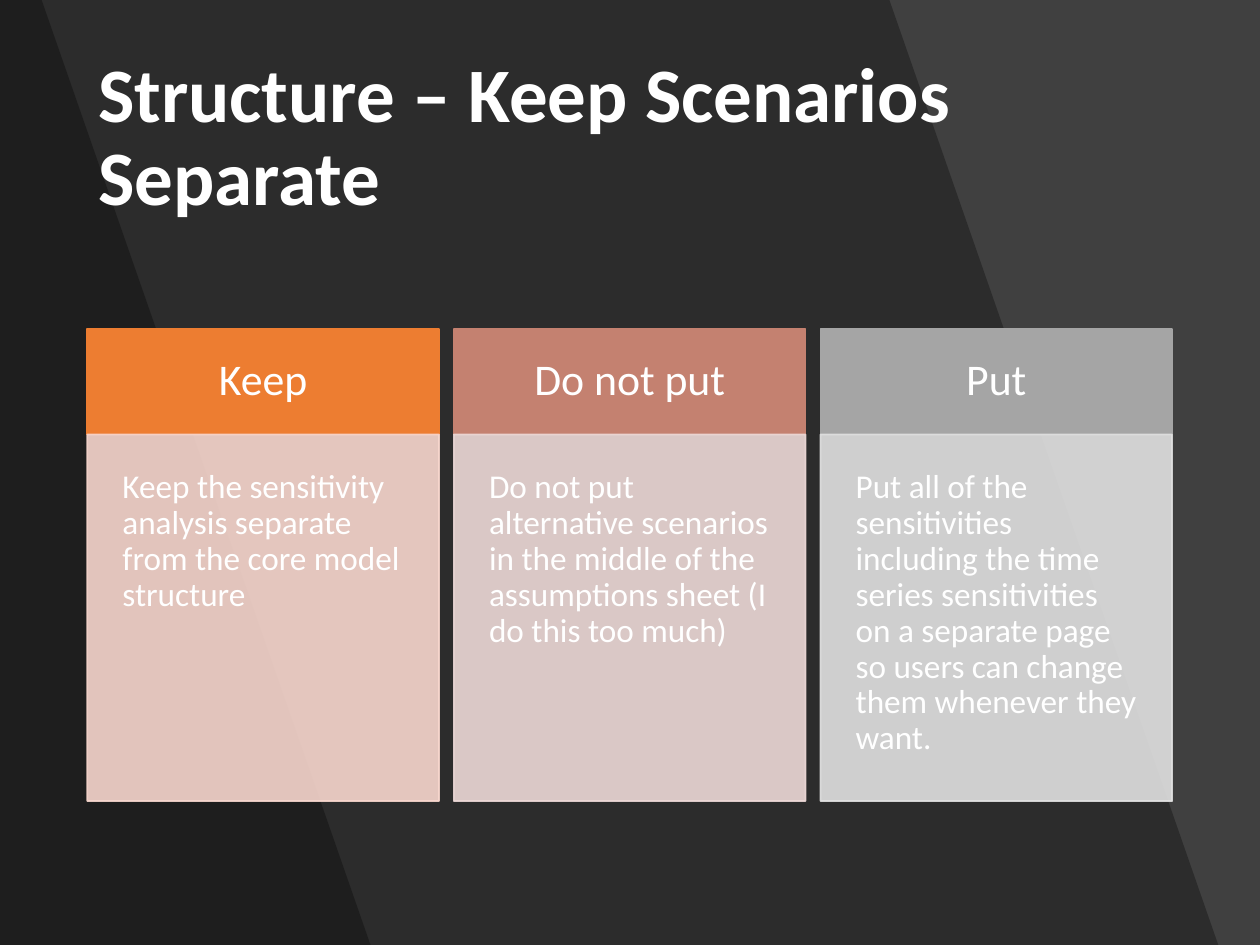
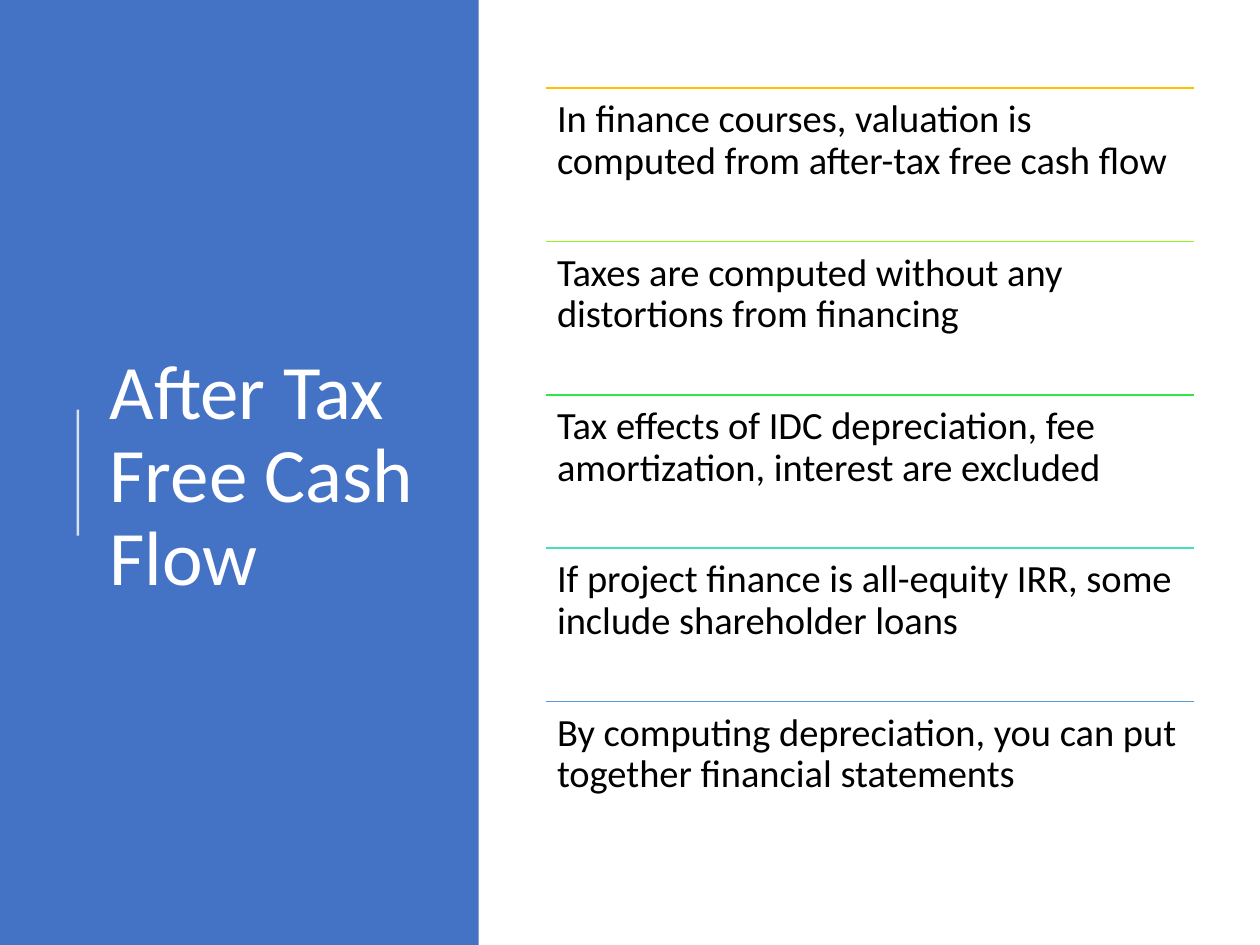
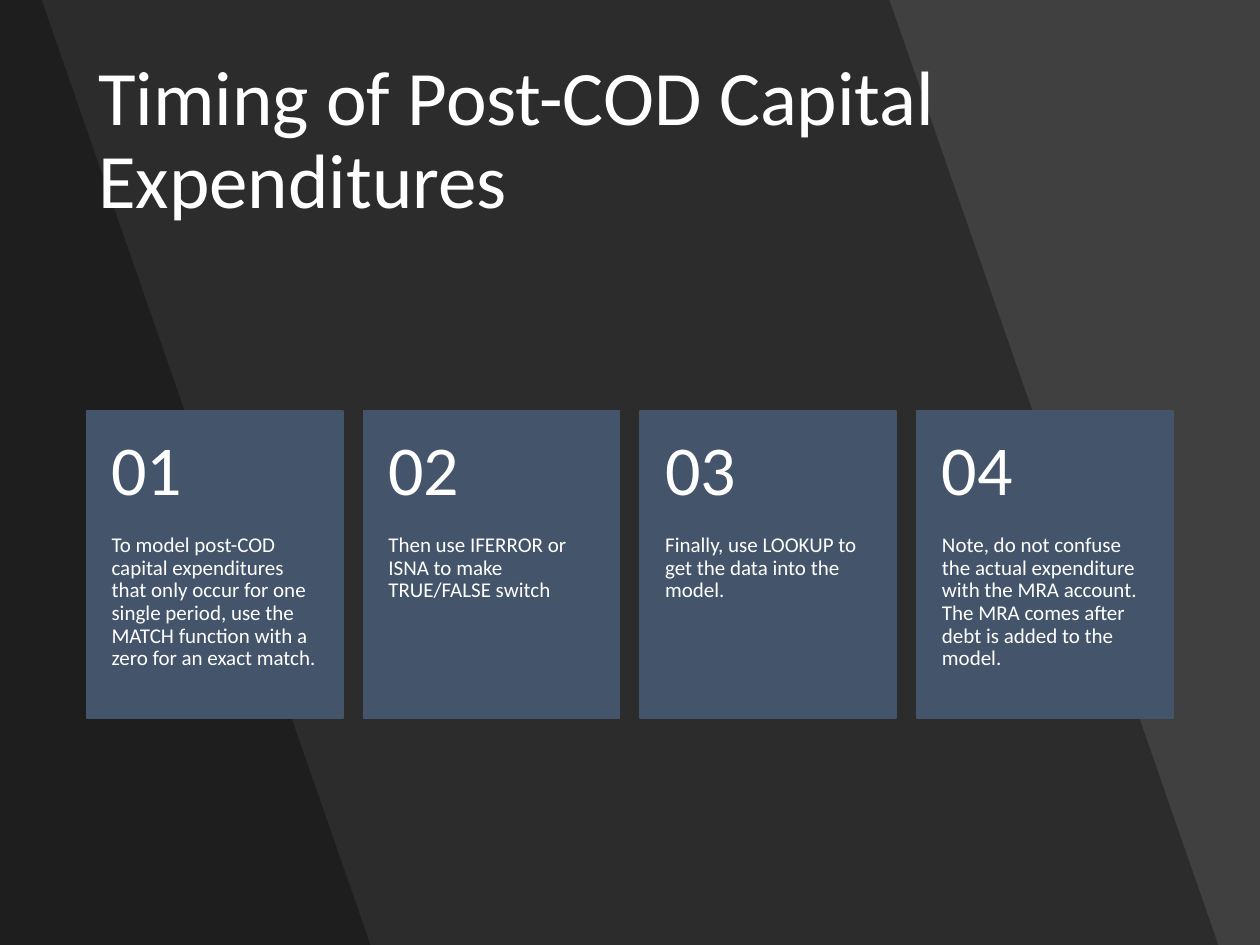
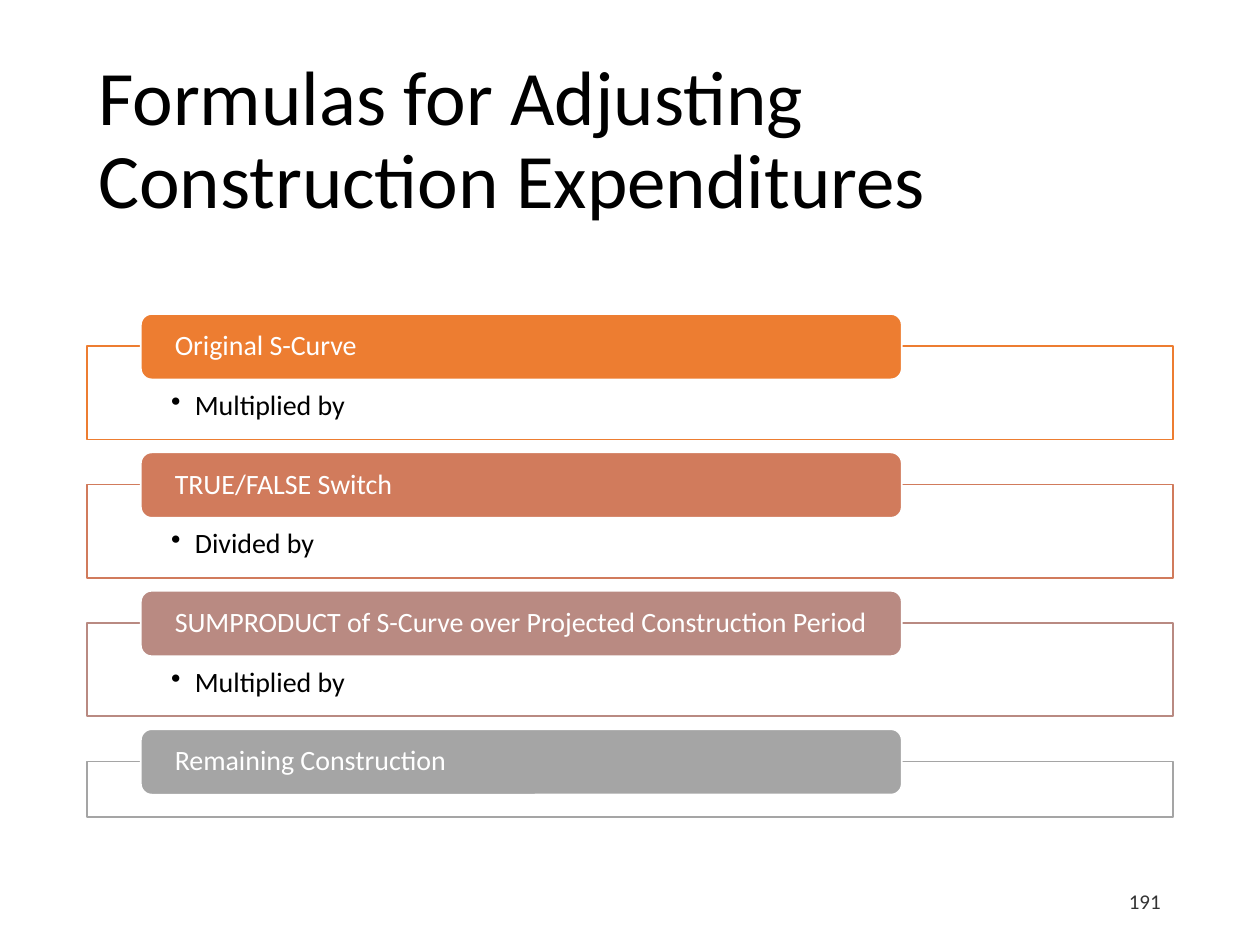
"""Build four project finance modelling slides."""
from dataclasses import dataclass, field
from typing import Any, NamedTuple

import lxml.etree
import pptx
import pptx.dml.color
import pptx.enum.shapes
import pptx.enum.text
import pptx.oxml.ns
import pptx.util

ALIGN = pptx.enum.text.PP_ALIGN
ANCHOR = pptx.enum.text.MSO_ANCHOR
SHAPE = pptx.enum.shapes.MSO_SHAPE

FONT = "Calibri"
WHITE, BLACK = "FFFFFF", "000000"
ORANGE, GREY, BLUE, SLATE, CHARCOAL = "ED7D31", "A5A5A5", "4472C4", "44546A", "404040"
SLIDE_W, SLIDE_H = 25.4, 19.05


class Box(NamedTuple):
    """Position and size in centimetres."""
    x: float
    y: float
    w: float
    h: float


class Insets(NamedTuple):
    """Text frame margins in centimetres."""
    left: float = 0.25
    top: float = 0.13
    right: float = 0.25
    bottom: float = 0.13


@dataclass(frozen=True)
class TextStyle:
    """Look of a one-paragraph text frame."""
    size: float
    color: str = WHITE
    alpha: int = 100
    bold: bool = False
    align: Any = ALIGN.LEFT
    anchor: Any = ANCHOR.TOP
    insets: Insets = field(default_factory=Insets)
    spacing: float = 0.9
    bullet: bool = False


class Column(NamedTuple):
    """Headed column with a tinted body."""
    head: str
    body: str
    color: str
    tint: str


class Rule(NamedTuple):
    """Statement under a coloured line."""
    text: str
    color: str


class Step(NamedTuple):
    """Formula term, the operator after it and its frame height."""
    term: str
    operator: str
    color: str
    height: float = 1.88


TITLE = TextStyle(44, anchor=ANCHOR.MIDDLE)
TITLE_BOLD = TextStyle(44, bold=True, anchor=ANCHOR.MIDDLE)
TITLE_DARK = TextStyle(44, BLACK, anchor=ANCHOR.MIDDLE)
TITLE_BOX = Box(1.73, 1.02, 21.92, 3.68)
COLUMN_HEAD = TextStyle(25, align=ALIGN.CENTER, anchor=ANCHOR.MIDDLE, insets=Insets(*[0.56] * 4))
COLUMN_BODY = TextStyle(19, insets=Insets(*[0.71] * 4))
RULE_TEXT = TextStyle(22, BLACK, insets=Insets(*[0.23] * 4))
CARD_NUMBER = TextStyle(40, anchor=ANCHOR.MIDDLE, insets=Insets(0.5, 0.46, 0.5, 0.46))
CARD_TEXT = TextStyle(12, insets=Insets(0.5, 0, 0.5, 0.91))
STEP_TERM = TextStyle(16, anchor=ANCHOR.MIDDLE, insets=Insets(0.62, 0, 0.62, 0))
STEP_OPERATOR = TextStyle(16, BLACK, insets=Insets(1.7, 0.91, 1.7, 0.3), bullet=True)
PAGE_NUMBER = TextStyle(12, BLACK, 80, align=ALIGN.RIGHT, anchor=ANCHOR.MIDDLE, spacing=1.0)

COLUMNS = [
    Column("Keep", "Keep the sensitivity analysis separate from the core model structure",
           ORANGE, "F8D7CE"),
    Column("Do not put", "Do not put alternative scenarios in the middle of the assumptions "
           "sheet (I do this too much)", "C48170", "EDD9D7"),
    Column("Put", "Put all of the sensitivities including the time series sensitivities on a "
           "separate page so users can change them whenever they want.", GREY, "E1E1E1"),
]
RULES = [
    Rule("In finance courses, valuation is computed from after-tax free cash flow", "FFC000"),
    Rule("Taxes are computed without any distortions from financing", "94F319"),
    Rule("Tax effects of IDC depreciation, fee amortization, interest are excluded", "30E845"),
    Rule("If project finance is all-equity IRR, some include shareholder loans", "46DEBF"),
    Rule("By computing depreciation, you can put together financial statements", "5B9BD5"),
]
CARDS = [
    "To model post-COD capital expenditures that only occur for one single period, use the "
    "MATCH function with a zero for an exact match.",
    "Then use IFERROR or ISNA to make TRUE/FALSE switch",
    "Finally, use LOOKUP to get the data into the model.",
    "Note, do not confuse the actual expenditure with the MRA account. The MRA comes after "
    "debt is added to the model.",
]
STEPS = [
    Step("Original S-Curve", "Multiplied by", ORANGE),
    Step("TRUE/FALSE Switch", "Divided by", "D17B5C"),
    Step("SUMPRODUCT of S-Curve over Projected Construction Period", "Multiplied by", "B98A82"),
    Step("Remaining Construction", "", GREY, 1.12),
]


def cm(*values: float) -> list[pptx.util.Length]:
    """Convert centimetres to lengths."""
    return [pptx.util.Cm(v) for v in values]


def apply(obj: Any, values: dict[str, Any]) -> None:
    """Set attributes from a dict."""
    for name, value in values.items():
        setattr(obj, name, value)


def sub(parent: Any, tag: str, **attrs: str) -> None:
    """Append an XML child."""
    lxml.etree.SubElement(parent, pptx.oxml.ns.qn(tag), attrs)


def paint(fill: Any, sp: Any, color: str, alpha: int = 100) -> None:
    """Fill the newest part of a shape with a hex colour and an opacity in percent."""
    fill.solid()
    fill.fore_color.rgb = pptx.dml.color.RGBColor.from_string(color)
    if alpha < 100:
        newest = list(sp.element.iter(pptx.oxml.ns.qn("a:srgbClr")))[-1]
        sub(newest, "a:alpha", val=str(alpha * 1000))


def write(sp: Any, text: str, style: TextStyle) -> None:
    """Put one styled paragraph into a shape."""
    tf = sp.text_frame
    margins = {f"margin_{side}": pptx.util.Cm(v) for side, v in style.insets._asdict().items()}
    apply(tf, {"word_wrap": True, "vertical_anchor": style.anchor, **margins})
    p = tf.paragraphs[0]
    apply(p, {"alignment": style.align, "line_spacing": style.spacing})
    if style.bullet:
        p.level = 1
        ppr = next(sp.element.iter(pptx.oxml.ns.qn("a:pPr")))
        hang = int(pptx.util.Cm(0.48))
        ppr.set("marL", str(hang))
        ppr.set("indent", str(-hang))
        sub(ppr, "a:buChar", char="•")
    r = p.add_run()
    r.text = text
    apply(r.font, {"name": FONT, "size": pptx.util.Pt(style.size), "bold": style.bold})
    paint(r.font.fill, sp, style.color, style.alpha)


def add_text(s: Any, box: Box, text: str, style: TextStyle) -> None:
    """Add a text box."""
    write(s.shapes.add_textbox(*cm(*box)), text, style)


def add_panel(s: Any, box: Box, color: str, line: str = "", alpha: int = 100,
              line_alpha: int = 100, kind: Any = SHAPE.RECTANGLE) -> Any:
    """Add a filled shape, outlined if a line colour is given."""
    sp = s.shapes.add_shape(kind, *cm(*box))
    sp.shadow.inherit = False
    paint(sp.fill, sp, color, alpha)
    if line:
        sp.line.width = pptx.util.Pt(1)
        paint(sp.line.fill, sp, line, line_alpha)
    else:
        sp.line.fill.background()
    return sp


def add_line(s: Any, x1: float, y1: float, x2: float, y2: float, color: str,
             width: float = 1, alpha: int = 100) -> None:
    """Add a straight line."""
    cx = s.shapes.add_connector(pptx.enum.shapes.MSO_CONNECTOR.STRAIGHT, *cm(x1, y1, x2, y2))
    cx.line.width = pptx.util.Pt(width)
    paint(cx.line.fill, cx, color, alpha)
    sub(cx.element.spPr, "a:effectLst")


def add_slide(prs: Any, color: str = WHITE) -> Any:
    """Add a blank slide with a plain background."""
    s = prs.slides.add_slide(prs.slide_layouts[6])
    fill = s.background.fill
    fill.solid()
    fill.fore_color.rgb = pptx.dml.color.RGBColor.from_string(color)
    return s


def add_dark_slide(prs: Any) -> Any:
    """Add a charcoal slide with two slanted translucent bands."""
    s = add_slide(prs, CHARCOAL)
    for top, bottom in ((17.93, 24.56), (0.84, 7.47)):
        fb = s.shapes.build_freeform(0, 0)
        corners = ((top, 0), (bottom, SLIDE_H), (0, SLIDE_H))
        fb.add_line_segments([cm(*corner) for corner in corners], close=True)
        sp = fb.convert_to_shape()
        sp.shadow.inherit = False
        paint(sp.fill, sp, BLACK, 30)
        sp.line.fill.background()
    return s


def scenarios_slide(prs: Any) -> None:
    """Three headed columns."""
    s = add_dark_slide(prs)
    for i, col in enumerate(COLUMNS):
        x = 1.76 + i * 7.39
        head = add_panel(s, Box(x, 6.63, 7.09, 2.13), col.color, col.color)
        write(head, col.head, COLUMN_HEAD)
        body = add_panel(s, Box(x, 8.76, 7.09, 7.39), col.tint, col.tint, 90, 90)
        write(body, col.body, COLUMN_BODY)
    add_text(s, TITLE_BOX._replace(y=0.97), "Structure – Keep Scenarios Separate", TITLE_BOLD)


def cash_flow_slide(prs: Any) -> None:
    """Side title with ruled statements."""
    s = add_slide(prs)
    add_panel(s, Box(0, 0, 9.65, SLIDE_H), BLUE)
    add_line(s, 1.57, 10.8, 1.57, 8.26, WHITE, 1.5, 80)
    left, width, pitch = 11, 13.06, 3.09
    for i, rule in enumerate(RULES):
        y = 1.78 + i * pitch
        add_line(s, left, y, left + width, y, rule.color)
        add_text(s, Box(left, y, width, pitch), rule.text, RULE_TEXT)
    add_text(s, Box(1.96, 1.98, 7.01, 15.29), "After Tax Free Cash Flow", TITLE)


def timing_slide(prs: Any) -> None:
    """Four numbered cards."""
    s = add_dark_slide(prs)
    for i, text in enumerate(CARDS):
        card = Box(1.75 + i * 5.58, 8.28, 5.16, 6.2)
        add_panel(s, card, SLATE, SLATE)
        add_text(s, card._replace(y=10.77, h=3.71), text, CARD_TEXT)
        add_text(s, card._replace(h=2.49), f"{i + 1:02}", CARD_NUMBER)
    add_text(s, TITLE_BOX, "Timing of Post-COD Capital Expenditures", TITLE)


def formulas_slide(prs: Any) -> None:
    """Formula terms on framed tabs."""
    s = add_slide(prs)
    for i, step in enumerate(STEPS):
        y = 6.98 + i * 2.79
        frame = add_panel(s, Box(1.75, y, 21.9, step.height), WHITE, step.color, 90)
        if step.operator:
            write(frame, step.operator, STEP_OPERATOR)
        tab = add_panel(s, Box(2.84, y - 0.65, 15.34, 1.32), step.color, WHITE,
                        kind=SHAPE.ROUNDED_RECTANGLE)
        write(tab, step.term, STEP_TERM)
    add_text(s, TITLE_BOX, "Formulas for Adjusting Construction Expenditures", TITLE_DARK)
    add_text(s, Box(17.93, 17.65, 5.72, 1.02), "191", PAGE_NUMBER)


def main() -> None:
    """Build and save the deck."""
    prs = pptx.Presentation()
    apply(prs, {"slide_width": pptx.util.Cm(SLIDE_W), "slide_height": pptx.util.Cm(SLIDE_H)})
    for build in (scenarios_slide, cash_flow_slide, timing_slide, formulas_slide):
        build(prs)
    prs.save("out.pptx")


if __name__ == "__main__":
    main()
